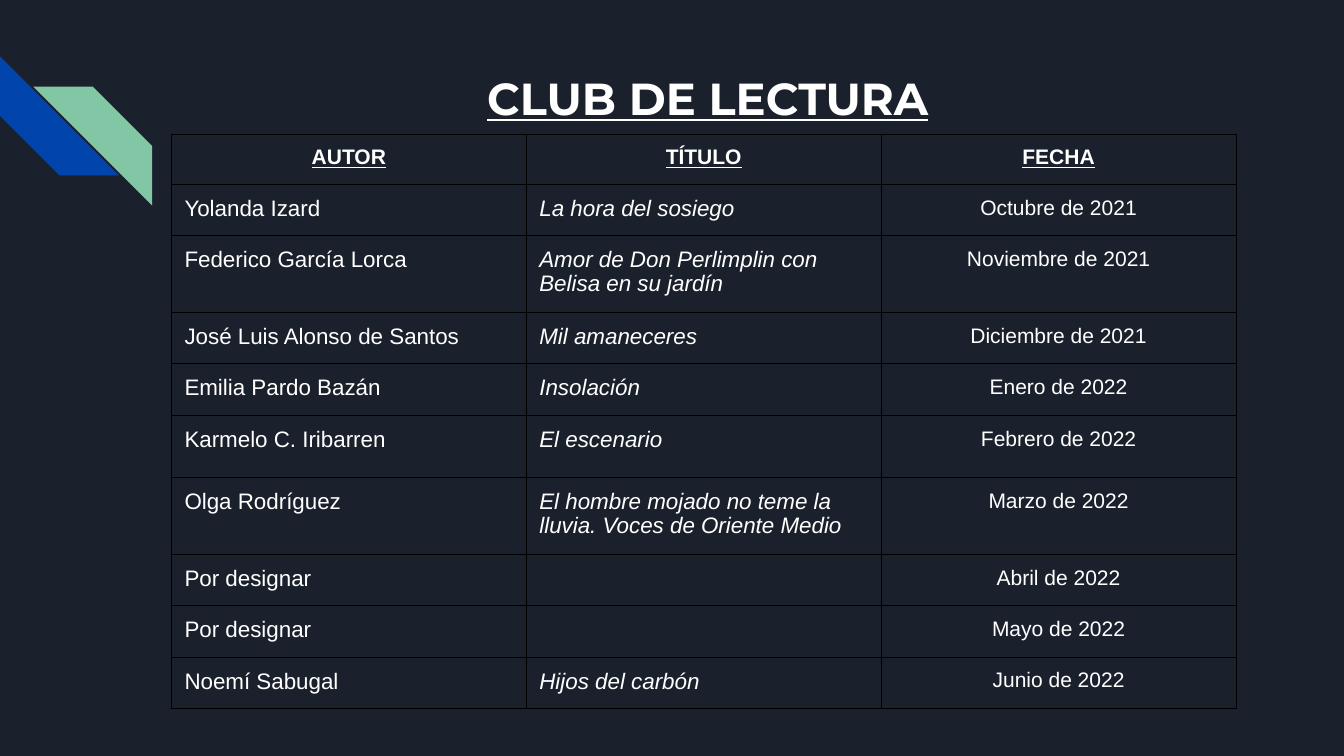
from lxml.etree import SubElement
from pptx import Presentation
from pptx.dml.color import RGBColor
from pptx.enum.shapes import MSO_SHAPE
from pptx.enum.text import MSO_ANCHOR, MSO_AUTO_SIZE, PP_ALIGN
from pptx.oxml.ns import qn
from pptx.util import Inches, Pt

DARK, BLUE, GREEN, WHITE, BLACK = "1B212C", "0145AC", "82C7A5", "FFFFFF", "000000"
PAD = Inches(0.13)

HEAD = ("AUTOR", "TÍTULO", "FECHA")
# Author, book, month and row height
BOOKS = [
    ("Yolanda Izard", "La hora del sosiego", "Octubre de 2021", 0.51),
    ("Federico García Lorca", "Amor de Don Perlimplin con Belisa en su jardín",
     "Noviembre de 2021", 0.76),
    ("José Luis Alonso de Santos", "Mil amaneceres", "Diciembre de 2021", 0.51),
    ("Emilia Pardo Bazán", "Insolación", "Enero de 2022", 0.51),
    ("Karmelo C. Iribarren", "El escenario", "Febrero de 2022", 0.62),
    ("Olga Rodríguez", "El hombre mojado no teme la lluvia. Voces de Oriente Medio",
     "Marzo de 2022", 0.76),
    ("Por designar", "", "Abril de 2022", 0.51),
    ("Por designar", "", "Mayo de 2022", 0.51),
    ("Noemí Sabugal", "Hijos del carbón", "Junio de 2022", 0.51),
]


def color(code):
    return RGBColor.from_string(code)


class Page:
    def __init__(self, deck):
        self.slide = deck.slides.add_slide(deck.slide_layouts[5])
        fill = self.slide.background.fill
        fill.solid()
        fill.fore_color.rgb = color(DARK)

    def stripe(self, left, top, side, turn, tint):
        shape = self.slide.shapes.add_shape(
            MSO_SHAPE.DIAGONAL_STRIPE, Inches(left), Inches(top), Inches(side), Inches(side))
        shape.rotation = turn
        shape.shadow.inherit = False
        shape.fill.solid()
        shape.fill.fore_color.rgb = color(tint)
        shape.line.fill.background()

    def text(self, para, words, size, face="Arial", strong=False, slant=False):
        run = para.add_run()
        run.text = words
        font = run.font
        font.name, font.size = face, Pt(size)
        font.bold, font.underline, font.italic = strong, strong, slant
        font.color.rgb = color(WHITE)

    def title(self, words, left, top, width, height):
        box = self.slide.shapes.title
        box.left, box.top = Inches(left), Inches(top)
        box.width, box.height = Inches(width), Inches(height)
        frame = box.text_frame
        frame.word_wrap = True
        frame.auto_size = MSO_AUTO_SIZE.NONE
        frame.vertical_anchor = MSO_ANCHOR.TOP
        frame.margin_left = frame.margin_right = PAD
        frame.margin_top = frame.margin_bottom = PAD
        para = frame.paragraphs[0]
        para.alignment = PP_ALIGN.CENTER
        self.text(para, words, 32, "Montserrat", strong=True)

    def border(self, cell):
        props = cell._tc.get_or_add_tcPr()
        for side in ("a:lnL", "a:lnR", "a:lnT", "a:lnB"):
            line = SubElement(props, qn(side), w=str(Pt(0.75)))
            fill = SubElement(line, qn("a:solidFill"))
            SubElement(fill, qn("a:srgbClr"), val=BLACK)

    def cell(self, cell, words, size, center, strong=False, slant=False):
        self.border(cell)
        cell.fill.background()
        if not words:
            return
        cell.margin_left = cell.margin_right = PAD
        cell.margin_top = cell.margin_bottom = PAD
        para = cell.text_frame.paragraphs[0]
        para.alignment = PP_ALIGN.CENTER if center else PP_ALIGN.LEFT
        para.line_spacing = 0.95
        self.text(para, words, size, strong=strong, slant=slant)

    def table(self, left, top, width):
        highs = [0.5] + [book[-1] for book in BOOKS]
        grid = self.slide.shapes.add_table(
            len(highs), len(HEAD), Inches(left), Inches(top),
            Inches(width), Inches(sum(highs))).table
        grid.first_row = grid.horz_banding = False
        for row, high in zip(grid.rows, highs):
            row.height = Inches(high)
        for col, name in enumerate(HEAD):
            self.cell(grid.cell(0, col), name, 15, True, strong=True)
            for row, book in enumerate(BOOKS, 1):
                date = col == 2
                self.cell(grid.cell(row, col), book[col], 15 if date else 16,
                          date, slant=col == 1)


def main():
    deck = Presentation()
    deck.slide_width, deck.slide_height = Inches(13.33), Inches(7.5)
    page = Page(deck)

    # Corner stripes
    page.stripe(0, 0.56, 1.18, 270, BLUE)
    page.stripe(0.33, 0.86, 1.18, 90, GREEN)

    # Title and reading list
    page.title("CLUB DE LECTURA", 1.89, 0.57, 10.26, 0.75)
    page.table(1.7, 1.33, 10.56)

    deck.save("out.pptx")


if __name__ == "__main__":
    main()
